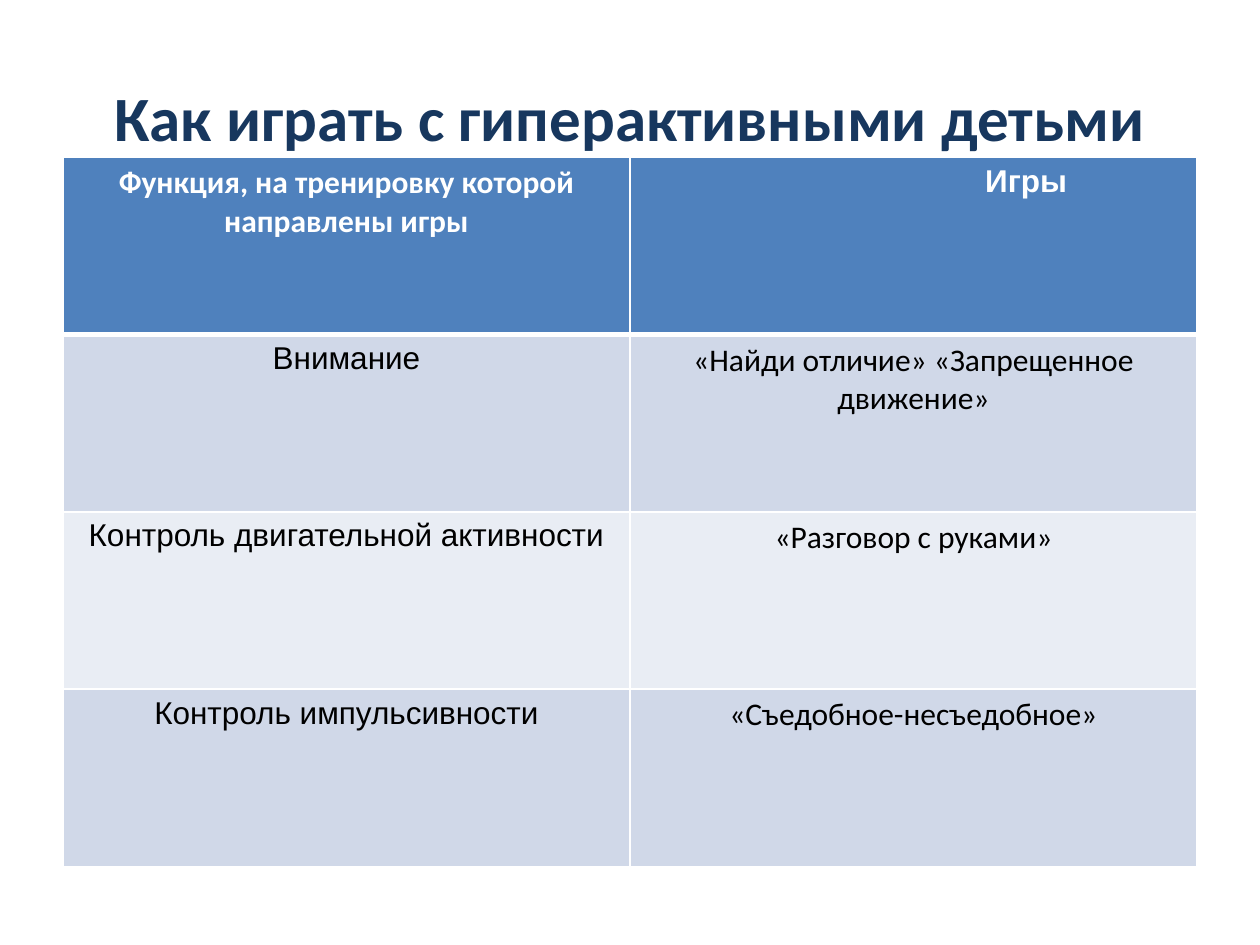
import pptx
import pptx.util
import pptx.dml.color
import pptx.enum.text
import pptx.oxml
import pptx.oxml.ns

Pt = pptx.util.Pt
CENTER = pptx.enum.text.PP_ALIGN.CENTER


def write(para, text, font, size, color, bold=False):
    para.alignment = CENTER
    span = para.add_run()
    span.text = text
    span.font.name = font
    span.font.size = Pt(size)
    span.font.bold = bold
    span.font.color.rgb = pptx.dml.color.RGBColor.from_string(color)


def add_border(cell, side, width):
    """Append a solid white border; call in the order L, R, T, B, before the fill."""
    cell._tc.get_or_add_tcPr().append(pptx.oxml.parse_xml(
        f'<a:ln{side} {pptx.oxml.ns.nsdecls("a")} w="{Pt(width)}">'
        f'<a:solidFill><a:srgbClr val="FFFFFF"/></a:solidFill></a:ln{side}>'))


deck = pptx.Presentation()
deck.slide_width, deck.slide_height = Pt(720), Pt(540)
page = deck.slides.add_slide(deck.slide_layouts[5])

title = page.shapes.title
title.left, title.top, title.width, title.height = Pt(36), Pt(21.6), Pt(648), Pt(90)
title.text_frame.auto_size = pptx.enum.text.MSO_AUTO_SIZE.NONE
title.text_frame.vertical_anchor = pptx.enum.text.MSO_ANCHOR.MIDDLE
write(title.text_frame.paragraphs[0], "Как играть с гиперактивными детьми",
      "Calibri", 36, "17375E", bold=True)

rows = [
    ("Функция, на тренировку которой направлены игры", "Игры"),
    ("Внимание", "«Найди отличие» «Запрещенное движение»"),
    ("Контроль двигательной активности", "«Разговор с руками»"),
    ("Контроль импульсивности", "«Съедобное-несъедобное»"),
]
row_fills = ["4F81BD", "D0D8E8", "E9EDF4", "D0D8E8"]

table = page.shapes.add_table(len(rows), 2, Pt(36), Pt(90), Pt(648), Pt(405.2)).table
for row_index, texts in enumerate(rows):
    table.rows[row_index].height = Pt(101.3)
    is_header = row_index == 0
    for column_index, text in enumerate(texts):
        cell = table.cell(row_index, column_index)
        widths = {"L": 1, "R": 1, "T": 3 if row_index == 1 else 1, "B": 3 if is_header else 1}
        for side, width in widths.items():
            add_border(cell, side, width)
        cell.fill.solid()
        cell.fill.fore_color.rgb = pptx.dml.color.RGBColor.from_string(row_fills[row_index])
        # The header row uses the two fonts the other way round.
        font = "Calibri" if is_header == (column_index == 0) else "Arial"
        write(cell.text_frame.paragraphs[0], text, font, 18,
              "FFFFFF" if is_header else "000000", bold=is_header)

# The right heading sits off-centre, towards the right edge.
table.cell(0, 1).margin_left = Pt(136)

deck.save("out.pptx")
